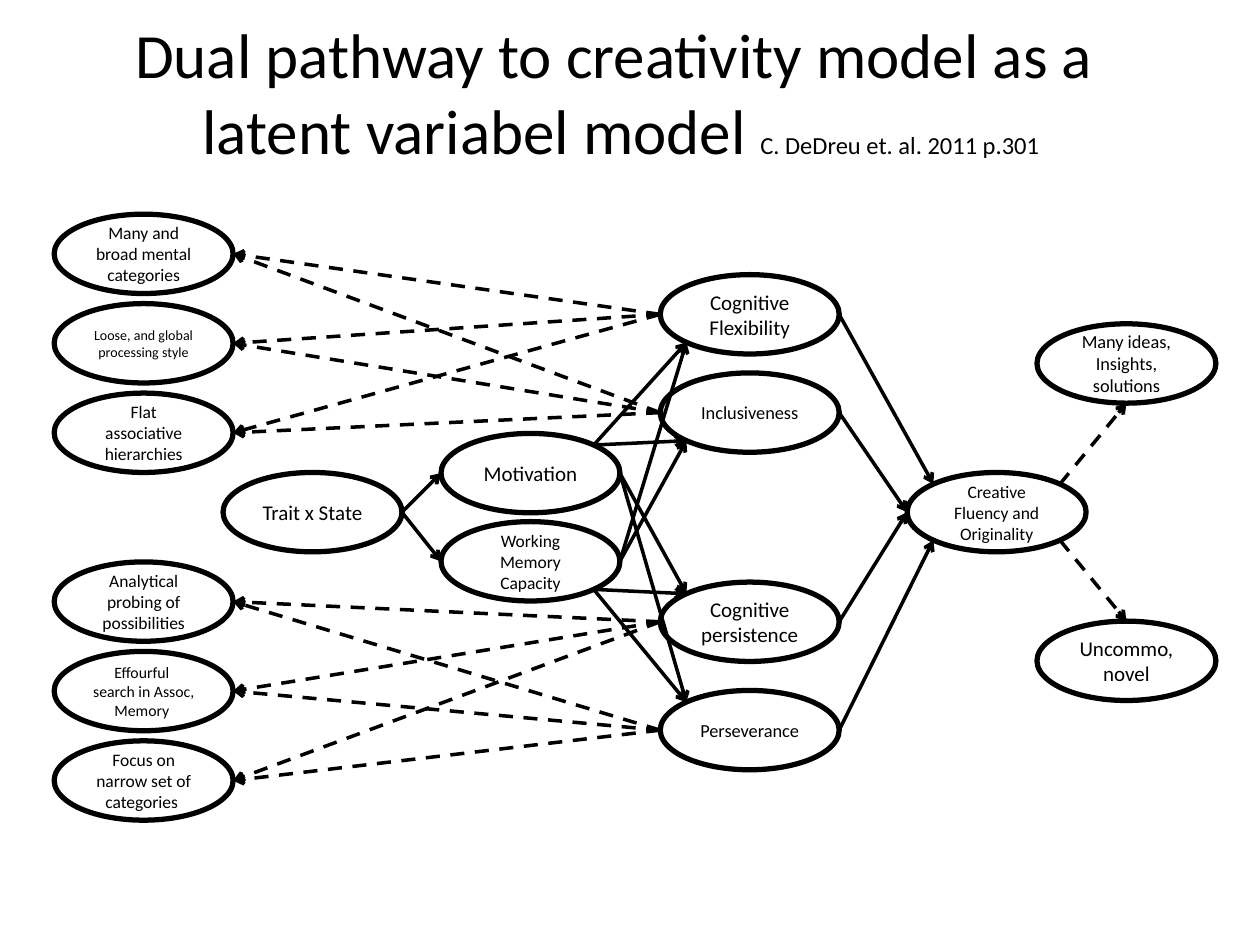
from dataclasses import dataclass
from itertools import product
from math import sqrt

from lxml.etree import SubElement
from pptx import Presentation
from pptx.dml.color import RGBColor
from pptx.enum.dml import MSO_LINE_DASH_STYLE as Dash
from pptx.enum.shapes import MSO_CONNECTOR as Connector, MSO_SHAPE as Preset
from pptx.enum.text import MSO_ANCHOR as Anchor, PP_ALIGN as Align
from pptx.oxml.ns import qn
from pptx.util import Inches, Pt


@dataclass(frozen=True)
class Theme:
    """Hold the colours, type sizes and line widths of the slide."""
    ink: RGBColor = RGBColor(0, 0, 0)
    font: str = "Calibri"
    title: float = 36
    citation: float = 14
    large: float = 12
    medium: float = 10.5
    normal: float = 10
    small: float = 9
    tiny: float = 8
    outline: float = 3
    path_line: float = 2


THEME = Theme()
OVAL_WIDTH, OVAL_HEIGHT = 1.42, 0.63
DIAGONAL = 1 / sqrt(2)
SITES = {
    "left": (-1, 0), "right": (1, 0), "top": (0, -1), "bottom": (0, 1),
    "top left": (-DIAGONAL, -DIAGONAL), "top right": (DIAGONAL, -DIAGONAL),
    "bottom left": (-DIAGONAL, DIAGONAL), "bottom right": (DIAGONAL, DIAGONAL),
}

BROAD_SIGNS = [
    ("Many and broad mental categories", THEME.normal),
    ("Loose, and global processing style", THEME.tiny),
    ("Flat associative hierarchies", THEME.normal),
]
NARROW_SIGNS = [
    ("Analytical probing of possibilities", THEME.normal),
    ("Effourful \nsearch in Assoc, Memory ", THEME.small),
    ("Focus on narrow set of categories ", THEME.normal),
]


def write(paragraph, text, size, color=THEME.ink, font=THEME.font, align=Align.CENTER):
    """Add text to a paragraph, turning each newline into a line break."""
    paragraph.alignment = align
    for index, line in enumerate(text.split("\n")):
        if index:
            paragraph.add_line_break()
        run = paragraph.add_run()
        run.text = line
        run.font.size, run.font.name = Pt(size), font
        run.font.color.rgb = color


def add_title(slide, heading, citation):
    """Add the heading with its smaller citation."""
    title = slide.shapes.add_textbox(Inches(0.43), Inches(0.29), Inches(9), Inches(0.87))
    frame = title.text_frame
    frame.word_wrap = True
    frame.vertical_anchor = Anchor.MIDDLE
    write(frame.paragraphs[0], heading, size=THEME.title)
    write(frame.paragraphs[0], citation, size=THEME.citation)


def add_variable(slide, label, left, top, size):
    """Add one latent variable as an outlined oval."""
    oval = slide.shapes.add_shape(
        Preset.OVAL, Inches(left), Inches(top), Inches(OVAL_WIDTH), Inches(OVAL_HEIGHT))
    oval.shadow.inherit = False
    oval.fill.background()
    oval.line.color.rgb = THEME.ink
    oval.line.width = Pt(THEME.outline)
    oval.text_frame.word_wrap = True
    oval.text_frame.vertical_anchor = Anchor.MIDDLE
    write(oval.text_frame.paragraphs[0], label, size=size)
    return oval


def add_signs(slide, signs, top):
    """Stack a group of indicators in the left column."""
    return [add_variable(slide, label, 0.43, top + 0.71 * row, size)
            for row, (label, size) in enumerate(signs)]


def site(oval, name):
    """Return the point of a named site on the rim of an oval."""
    across, down = SITES[name]
    return (round(oval.left + oval.width * (1 + across) / 2),
            round(oval.top + oval.height * (1 + down) / 2))


def add_path(slide, source, source_site, target, target_site, dashed=False):
    """Draw an arrow from a site of one variable to a site of another."""
    arrow = slide.shapes.add_connector(
        Connector.STRAIGHT, *site(source, source_site), *site(target, target_site))
    arrow.line.color.rgb = THEME.ink
    arrow.line.width = Pt(THEME.path_line)
    if dashed:
        arrow.line.dash_style = Dash.DASH
    SubElement(arrow.line._get_or_add_ln(), qn("a:tailEnd"), type="arrow")
    SubElement(arrow._element.spPr, qn("a:effectLst"))


def main():
    """Build the slide and save it."""
    deck = Presentation()
    deck.slide_width, deck.slide_height = Inches(10), Inches(7.5)
    slide = deck.slides.add_slide(deck.slide_layouts[6])
    add_title(slide, "Dual pathway to creativity model as a \nlatent variabel model ",
              "C. DeDreu et. al. 2011 p.301")

    broad = add_signs(slide, BROAD_SIGNS, top=1.7)
    narrow = add_signs(slide, NARROW_SIGNS, top=4.46)
    trait = add_variable(slide, "Trait x State ", 1.77, 3.75, THEME.large)
    motivation = add_variable(slide, "Motivation", 3.5, 3.44, THEME.large)
    memory = add_variable(slide, "Working Memory Capacity", 3.5, 4.14, THEME.normal)
    flexibility = add_variable(slide, "Cognitive Flexibility", 5.24, 2.18, THEME.large)
    inclusiveness = add_variable(slide, "Inclusiveness", 5.24, 2.96, THEME.medium)
    persistence = add_variable(slide, "Cognitive persistence", 5.24, 4.62, THEME.large)
    perseverance = add_variable(slide, "Perseverance", 5.24, 5.48, THEME.medium)
    creativity = add_variable(
        slide, "Creative Fluency and Originality", 7.2, 3.75, THEME.normal)
    ideas = add_variable(slide, "Many ideas, Insights, solutions", 8.23, 2.57, THEME.medium)
    novelty = add_variable(slide, "Uncommo, novel", 8.23, 4.93, THEME.large)

    flexible_path = [flexibility, inclusiveness]
    persistent_path = [persistence, perseverance]
    for cause in (motivation, memory):
        add_path(slide, trait, "right", cause, "left")
    for cause, flexible_site, persistent_site in (
            (motivation, "top right", "right"), (memory, "right", "bottom right")):
        for process in flexible_path:
            add_path(slide, cause, flexible_site, process, "bottom left")
        for process in persistent_path:
            add_path(slide, cause, persistent_site, process, "top left")
    for process, entry in ((flexibility, "top left"), (inclusiveness, "left"),
                           (persistence, "left"), (perseverance, "bottom left")):
        add_path(slide, process, "right", creativity, entry)
    for processes, signs in ((flexible_path, broad), (persistent_path, narrow)):
        for process, sign in product(processes, signs):
            add_path(slide, process, "left", sign, "right", dashed=True)
    add_path(slide, creativity, "top right", ideas, "bottom", dashed=True)
    add_path(slide, creativity, "bottom right", novelty, "top", dashed=True)
    deck.save("out.pptx")


if __name__ == "__main__":
    main()
